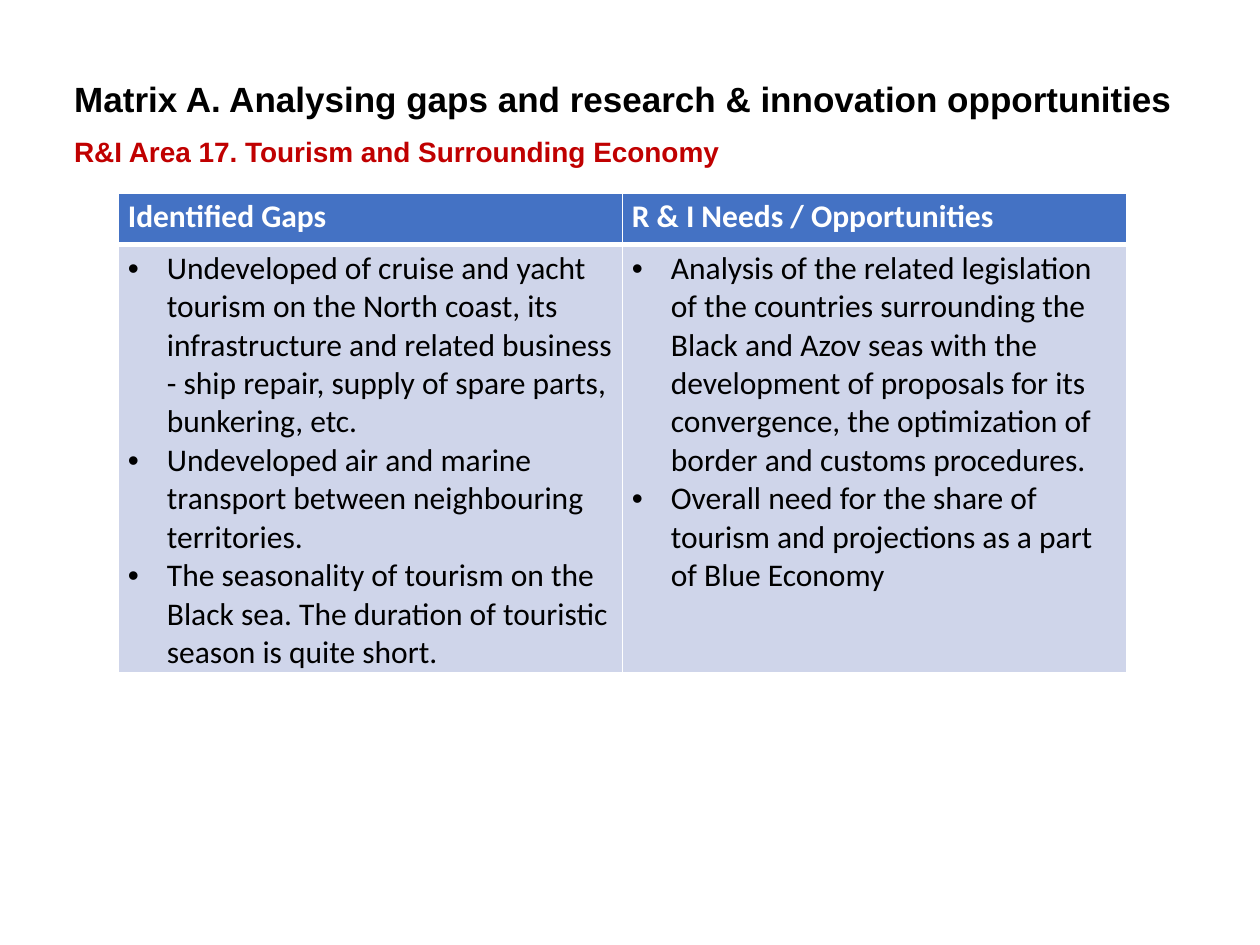
from dataclasses import dataclass

from lxml import etree
from pptx import Presentation
from pptx.dml.color import RGBColor
from pptx.enum.text import MSO_ANCHOR
from pptx.oxml.ns import qn
from pptx.slide import Slide
from pptx.util import Inches, Pt

TOP, MIDDLE = MSO_ANCHOR.TOP, MSO_ANCHOR.MIDDLE
WIDTH, HEIGHT = 10, 7.5

HEADERS = ["Identified Gaps", "R & I Needs / Opportunities"]
GAPS = [
    "Undeveloped of cruise and yacht tourism on the North coast, its infrastructure "
    "and related business - ship repair, supply of spare parts, bunkering, etc.",
    "Undeveloped air and marine transport between neighbouring territories.",
    "The seasonality of tourism on the Black sea. The duration of touristic season "
    "is quite short.",
]
NEEDS = [
    "Analysis of the related legislation of the countries surrounding the Black and "
    "Azov seas with the development of proposals for its convergence, the "
    "optimization of border and customs procedures.",
    "Overall need for the share of tourism and projections as a part of Blue Economy",
]


def color(value):
    return RGBColor.from_string(value)


def across(percent):
    return Inches(WIDTH * percent / 100)


def down(percent):
    return Inches(HEIGHT * percent / 100)


@dataclass
class MatrixSlide:
    """Draws headings and a matrix table, placed by percent of the slide's size."""

    slide: Slide
    heading_font: str = "Arial"
    table_font: str = "Calibri"
    table_size: int = 18
    text: str = "000000"
    accent: str = "C00000"
    light: str = "FFFFFF"
    header_fill: str = "4472C4"
    body_fill: str = "CFD5EA"
    bullet_indent: float = 3.1

    def fill_paragraph(self, paragraph, text, font, size, fill, bold):
        paragraph.text = text
        paragraph.font.name = font
        paragraph.font.size = Pt(size)
        paragraph.font.bold = bold
        paragraph.font.color.rgb = color(fill)

    def heading(self, text, top, width, height, size, fill, anchor=TOP):
        shape = self.slide.shapes.add_textbox(
            across(4.9), down(top), across(width), down(height))
        frame = shape.text_frame
        frame.word_wrap = True
        frame.vertical_anchor = anchor
        self.fill_paragraph(frame.paragraphs[0], text, self.heading_font, size, fill, True)

    def bullet(self, paragraph):
        properties = paragraph._p.get_or_add_pPr()
        properties.set("marL", str(across(self.bullet_indent)))
        properties.set("indent", str(-across(self.bullet_indent)))
        etree.SubElement(properties, qn("a:buFont")).set("typeface", "Arial")
        etree.SubElement(properties, qn("a:buChar")).set("char", "•")

    def borders(self, cell, top, bottom):
        properties = cell._tc.get_or_add_tcPr()
        widths = {"a:lnL": 1, "a:lnR": 1, "a:lnT": top, "a:lnB": bottom}
        for position, (side, width) in enumerate(widths.items()):
            line = etree.Element(qn(side), w=str(Pt(width)))
            fill = etree.SubElement(line, qn("a:solidFill"))
            etree.SubElement(fill, qn("a:srgbClr")).set("val", self.light)
            properties.insert(position, line)

    def cell(self, cell, texts, header):
        cell.margin_left = cell.margin_right = across(0.75)
        cell.margin_top = down(0.5)
        cell.margin_bottom = 0
        cell.fill.solid()
        cell.fill.fore_color.rgb = color(self.header_fill if header else self.body_fill)
        self.borders(cell, 1 if header else 3, 3 if header else 1)
        frame = cell.text_frame
        for index, text in enumerate(texts):
            paragraph = frame.add_paragraph() if index else frame.paragraphs[0]
            if not header:
                self.bullet(paragraph)
            self.fill_paragraph(paragraph, text, self.table_font, self.table_size,
                                self.light if header else self.text, header)

    def matrix(self, headers, columns, left, top, width, row_heights):
        table = self.slide.shapes.add_table(
            len(row_heights), len(headers), across(left), down(top),
            across(width), down(sum(row_heights))).table
        for row, height in zip(table.rows, row_heights):
            row.height = down(height)
        for index, (header, items) in enumerate(zip(headers, columns)):
            self.cell(table.cell(0, index), [header], True)
            self.cell(table.cell(1, index), items, False)


def main():
    presentation = Presentation()
    presentation.slide_width = Inches(WIDTH)
    presentation.slide_height = Inches(HEIGHT)
    page = MatrixSlide(presentation.slides.add_slide(presentation.slide_layouts[6]))
    page.heading("Matrix A. Analysing gaps and research & innovation opportunities",
                 6.53, 89.8, 7.87, 20, page.text, MIDDLE)
    page.heading("R&I Area 17. Tourism and Surrounding Economy",
                 13.6, 77.3, 4.93, 16, page.accent)
    page.matrix(HEADERS, [GAPS, NEEDS], 9.4, 20.4, 80, [5.47, 45.33])
    presentation.save("out.pptx")


if __name__ == "__main__":
    main()
